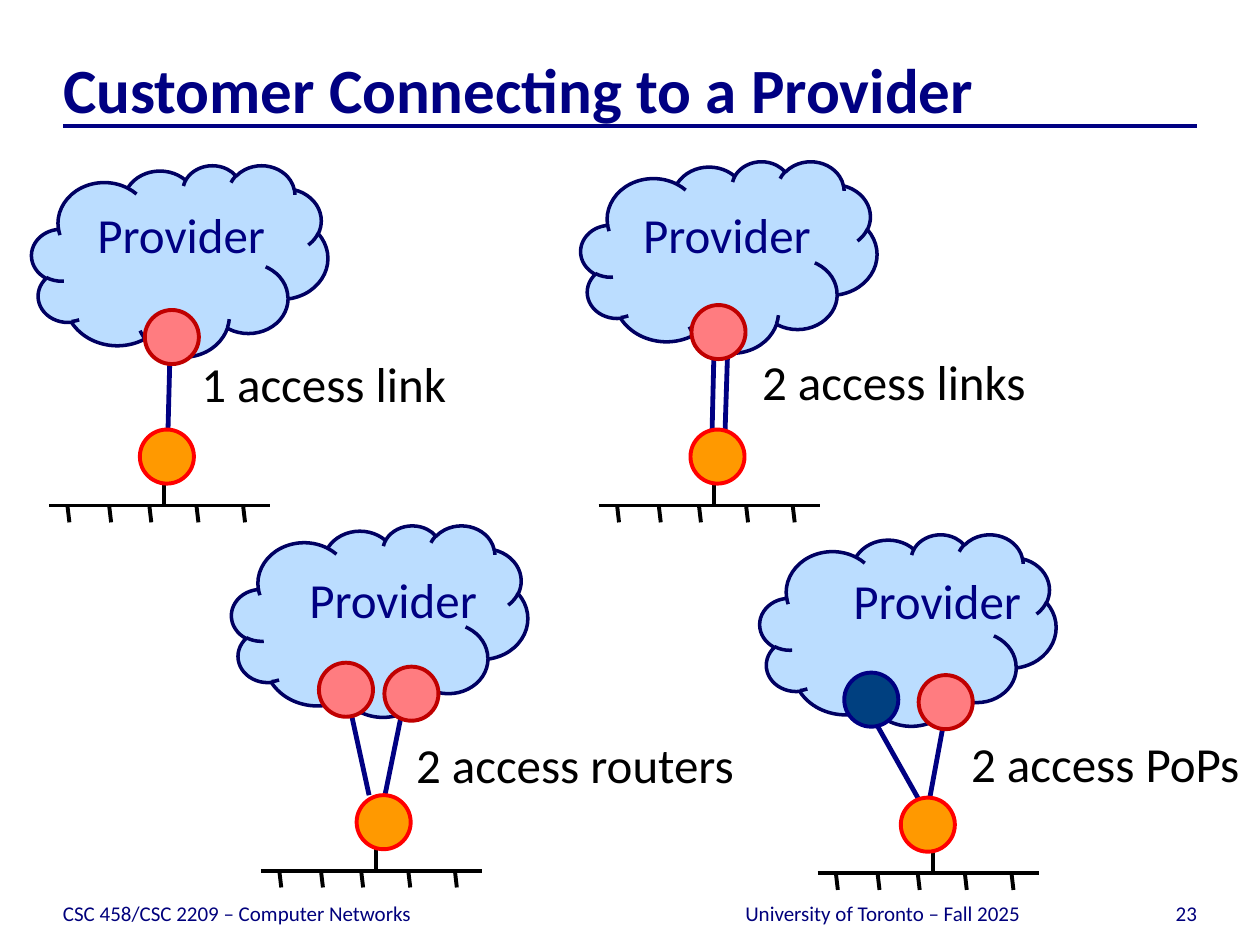
import pptx
import pptx.dml.color
import pptx.enum.shapes
import pptx.enum.text
import pptx.oxml.ns
import pptx.util
from lxml import etree
from dataclasses import dataclass
from pptx.util import Cm


@dataclass(frozen=True)
class Theme:
    font: str = "Calibri"
    navy: str = "000082"
    footer: str = "00007C"
    black: str = "000000"
    cloud_fill: str = "BBDDFF"
    cloud_line: str = "000062"
    router: tuple = ("FF7C80", "C00000")
    other_pop: tuple = ("004080", "000082")
    customer: tuple = ("FF9900", "FF0000")
    title_size: int = 36
    label_size: int = 28
    footer_size: int = 12


theme = Theme()
align = pptx.enum.text.PP_ALIGN
kinds = pptx.enum.shapes.MSO_SHAPE
rgb = pptx.dml.color.RGBColor.from_string

presentation = pptx.Presentation()
presentation.slide_width = Cm(25.4)
presentation.slide_height = Cm(19.05)
slide = presentation.slides.add_slide(presentation.slide_layouts[5])


def add_line(x1, y1, x2, y2, color=theme.black, width=2.25):
    connector = slide.shapes.add_connector(
        pptx.enum.shapes.MSO_CONNECTOR.STRAIGHT, Cm(x1), Cm(y1), Cm(x2), Cm(y2))
    connector.line.color.rgb = rgb(color)
    connector.line.width = pptx.util.Pt(width)
    properties = connector.element.find(pptx.oxml.ns.qn("p:spPr"))
    etree.SubElement(properties, pptx.oxml.ns.qn("a:effectLst"))


def set_text(shape, text, size, color, alignment, bold=False):
    frame = shape.text_frame
    frame.text = text
    frame.auto_size = pptx.enum.text.MSO_AUTO_SIZE.NONE
    paragraph = frame.paragraphs[0]
    paragraph.alignment = alignment
    paragraph.font.name = theme.font
    paragraph.font.size = pptx.util.Pt(size)
    paragraph.font.bold = bold
    paragraph.font.color.rgb = rgb(color)
    return frame


# Title, rule and footer
add_line(1.27, 2.54, 24.13, 2.54, theme.navy)
title = slide.shapes.title
title.left, title.top, title.width, title.height = Cm(1.27), Cm(0.84), Cm(22.86), Cm(1.7)
frame = set_text(title, "Customer Connecting to a Provider", theme.title_size,
                 theme.navy, align.LEFT, bold=True)
frame.vertical_anchor = pptx.enum.text.MSO_ANCHOR.BOTTOM
frame.margin_left = frame.margin_right = frame.margin_bottom = 0
frame.margin_top = Cm(0.13)

for text, left, width, alignment in [
    ("CSC 458/CSC 2209 – Computer Networks", 1.27, 12.27, align.LEFT),
    ("University of Toronto – Fall 2025", 13.77, 8.05, align.CENTER),
    ("23", 22.02, 2.11, align.RIGHT),
]:
    box = slide.shapes.add_textbox(Cm(left), Cm(17.65), Cm(width), Cm(1.02))
    frame = set_text(box, text, theme.footer_size, theme.footer, alignment)
    frame.word_wrap = True
    frame.vertical_anchor = pptx.enum.text.MSO_ANCHOR.BOTTOM
    frame.margin_left = frame.margin_right = frame.margin_top = frame.margin_bottom = 0

# Four ways to connect: positions are (left, top), links are (x1, y1, x2, y2)
connections = [
    dict(caption="1 access link", caption_box=(3.53, 7.01, 5.99),
         cloud=(0.64, 3.33), label=(1.6, 3.99), customer=(2.82, 8.66), lan=(0.99, 10.19),
         routers=[(2.92, 6.25, theme.router)],
         links=[(3.43, 6.99, 3.38, 8.92)]),
    dict(caption="2 access links", caption_box=(14.83, 6.96, 6.38),
         cloud=(11.71, 3.25), label=(12.6, 3.99), customer=(13.92, 8.66), lan=(12.07, 10.19),
         routers=[(13.94, 6.15, theme.router)],
         links=[(14.4, 6.78, 14.35, 8.89), (14.68, 6.71, 14.61, 8.89)]),
    dict(caption="2 access routers", caption_box=(7.92, 14.68, 7.34),
         cloud=(4.67, 10.59), label=(5.87, 11.35), customer=(7.19, 16.03), lan=(5.26, 17.55),
         routers=[(6.43, 13.36, theme.router), (7.75, 13.44, theme.router)],
         links=[(7.04, 14.2, 7.44, 16.03), (8.13, 14.22, 7.75, 16.08)]),
    dict(caption="2 access PoPs", caption_box=(19.08, 14.66, 6.4),
         cloud=(15.32, 10.77), label=(16.84, 11.38), customer=(18.16, 16.08), lan=(16.48, 17.6),
         routers=[(17.02, 13.56, theme.other_pop), (18.52, 13.61, theme.router)],
         links=[(17.27, 13.89, 18.67, 16.38), (19.08, 14.27, 18.72, 16.21)]),
]
router_size = 1.09

for connection in connections:
    for link in connection["links"]:
        add_line(*link, theme.navy, 2.75)

    # Customer network: stem, bus and slanted ticks
    left, top = connection["lan"]
    add_line(left + 2.32, top - 0.48, left + 2.32, top)
    add_line(left, top, left + 4.46, top)
    for offset in (0.37, 1.21, 2.02, 2.97, 3.91):
        add_line(left + offset, top, left + offset + 0.04, top + 0.34)

    nodes = [(kinds.CLOUD, *connection["cloud"], 5.97, 3.86,
              (theme.cloud_fill, theme.cloud_line), 2)]
    for x, y, colors in connection["routers"] + [(*connection["customer"], theme.customer)]:
        nodes.append((kinds.OVAL, x, y, router_size, router_size, colors, 2.25))
    for kind, x, y, width, height, (fill, line), weight in nodes:
        shape = slide.shapes.add_shape(kind, Cm(x), Cm(y), Cm(width), Cm(height))
        shape.shadow.inherit = False
        shape.fill.solid()
        shape.fill.fore_color.rgb = rgb(fill)
        shape.line.color.rgb = rgb(line)
        shape.line.width = pptx.util.Pt(weight)

    for text, (x, y, width), color in [
        ("Provider", (*connection["label"], 4.11), theme.navy),
        (connection["caption"], connection["caption_box"], theme.black),
    ]:
        box = slide.shapes.add_textbox(Cm(x), Cm(y), Cm(width), Cm(1.45))
        frame = set_text(box, text, theme.label_size, color, align.CENTER)
        frame.word_wrap = False

presentation.save("out.pptx")
